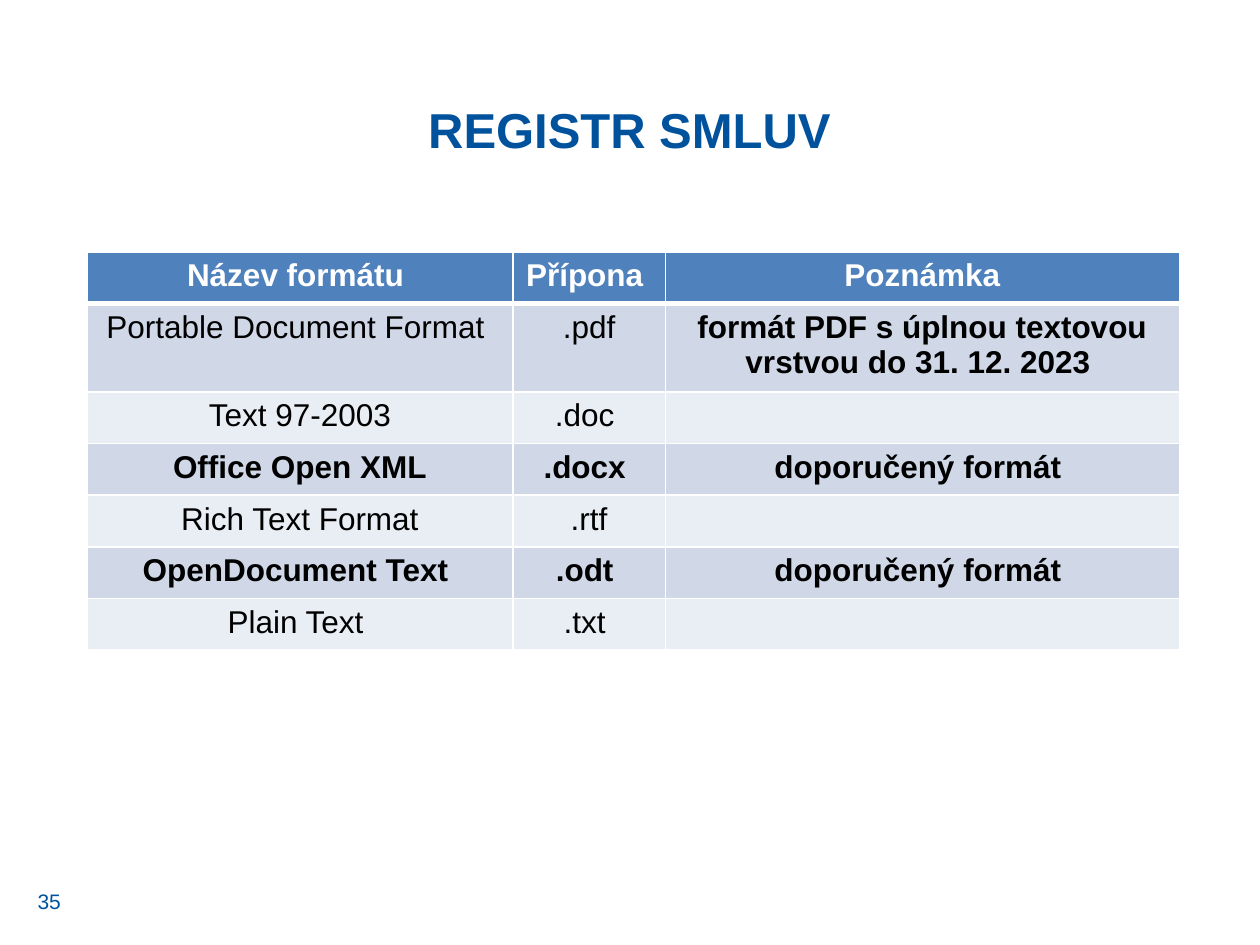
from lxml import etree
from pptx import Presentation, util as u
from pptx.dml.color import RGBColor
from pptx.enum import text
from pptx.oxml.ns import qn

COLORS = {"blue": "00529C", "header": "4F81BD", "odd": "D0D8E8",
          "even": "E9EDF4", "white": "FFFFFF", "black": "000000"}

HEADINGS = ("Název formátu ", "Přípona ", "Poznámka")
FORMATS = [  # name, extension, note, bold cells
    (("Portable Document Format ", ".pdf",
      "formát PDF s úplnou textovou vrstvou do 31. 12. 2023 "), (False, False, True)),
    (("Text 97-2003", ".doc ", ""), (False,) * 3),
    (("Office Open XML", ".docx ", "doporučený formát "), (True,) * 3),
    (("Rich Text Format", ".rtf", ""), (False,) * 3),
    (("OpenDocument Text ", ".odt ", "doporučený formát "), (True,) * 3),
    (("Plain Text ", ".txt ", ""), (False,) * 3),
]
COLUMN_WIDTHS = (3.38, 1.21, 4.08)
ROW_HEIGHT, TALL_ROW_HEIGHT = 0.41, 0.68


def rgb(name):
    return RGBColor.from_string(COLORS[name])


def write(frame, wording, color, align=text.PP_ALIGN.CENTER, **font_format):
    paragraph = frame.paragraphs[0]
    paragraph.alignment = align
    run = paragraph.add_run()
    run.text = wording
    run.font.color.rgb = rgb(color)
    for key, value in {"name": "Arial", **font_format}.items():
        setattr(run.font, key, value)


def add_label(slide, box, wording, anchor, **font_format):
    frame = slide.shapes.add_textbox(*map(u.Inches, box)).text_frame
    frame.word_wrap = True
    frame.vertical_anchor = anchor
    write(frame, wording, "blue", **font_format)


def add_borders(cell, widths):
    properties = cell._tc.get_or_add_tcPr()
    for side, points in widths.items():
        line = etree.SubElement(properties, qn(f"a:ln{side}"), w=str(u.Pt(points)))
        fill = etree.SubElement(line, qn("a:solidFill"))
        etree.SubElement(fill, qn("a:srgbClr"), val=COLORS["white"])


def add_formats_table(slide, left, top):
    rows = [(HEADINGS, (True,) * 3)] + FORMATS
    heights = [ROW_HEIGHT] * len(rows)
    heights[1] = TALL_ROW_HEIGHT
    box = map(u.Inches, (left, top, sum(COLUMN_WIDTHS), sum(heights)))
    table = slide.shapes.add_table(len(rows), len(COLUMN_WIDTHS), *box).table
    for column, width in zip(table.columns, COLUMN_WIDTHS):
        column.width = u.Inches(width)
    for r, (wordings, bolds) in enumerate(rows):
        table.rows[r].height = u.Inches(heights[r])
        band = "header" if r == 0 else "odd" if r % 2 else "even"
        ink = "white" if r == 0 else "black"
        widths = {"L": 1, "R": 1, "T": 3 if r == 1 else 1, "B": 3 if r == 0 else 1}
        for c, (wording, bold) in enumerate(zip(wordings, bolds)):
            cell = table.cell(r, c)
            add_borders(cell, widths)
            cell.fill.solid()
            cell.fill.fore_color.rgb = rgb(band)
            if wording:
                write(cell.text_frame, wording, ink, size=u.Pt(18), bold=bold)


def main():
    deck = Presentation()
    deck.slide_width, deck.slide_height = u.Inches(10), u.Inches(7.5)
    slide = deck.slides.add_slide(deck.slide_layouts[6])
    add_label(slide, (0.2, 6.95, 0.55, 0.4), "35", text.MSO_ANCHOR.MIDDLE,
              align=text.PP_ALIGN.LEFT, size=u.Pt(12))
    add_formats_table(slide, 0.69, 2)
    add_label(slide, (2.32, 0.74, 5.35, 0.57), "REGISTR SMLUV", text.MSO_ANCHOR.TOP,
              size=u.Pt(28), bold=True)
    deck.save("out.pptx")


if __name__ == "__main__":
    main()
